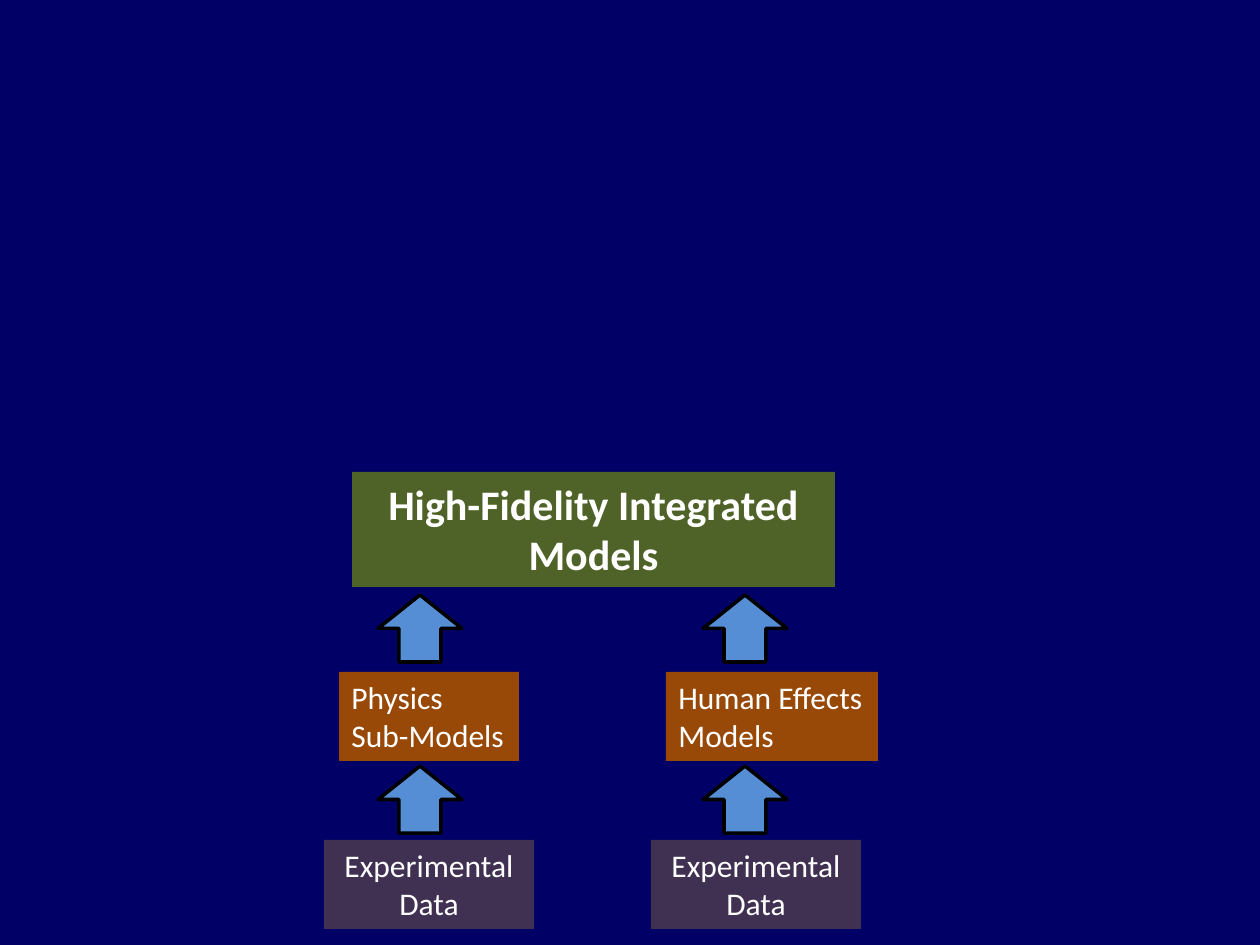
from pptx import Presentation
from pptx.dml.color import RGBColor
from pptx.enum.shapes import MSO_SHAPE
from pptx.enum.text import MSO_ANCHOR, MSO_AUTO_SIZE, PP_ALIGN
from pptx.util import Inches, Pt

PX = Inches(1) / 126
NAVY = RGBColor(0x00, 0x00, 0x66)
GREEN = RGBColor(0x4F, 0x62, 0x28)
BROWN = RGBColor(0x98, 0x48, 0x07)
PURPLE = RGBColor(0x40, 0x31, 0x52)
BLUE = RGBColor(0x55, 0x8E, 0xD5)
WHITE = RGBColor(0xFF, 0xFF, 0xFF)
BLACK = RGBColor(0x00, 0x00, 0x00)
UP_ARROW = MSO_SHAPE.UP_ARROW
LEFT, CENTER = PP_ALIGN.LEFT, PP_ALIGN.CENTER
TOP = MSO_ANCHOR.TOP
GROW = MSO_AUTO_SIZE.SHAPE_TO_FIT_TEXT


class Canvas:
    font = "Calibri"

    def __init__(self, slide, background):
        self.slide = slide
        fill = slide.background.fill
        fill.solid()
        fill.fore_color.rgb = background

    def emu(self, *lengths):
        return [round(length * PX) for length in lengths]

    def box(self, x, y, w, h, lines, color, size=18, bold=False, align=CENTER, wrap=True):
        s = self.slide.shapes.add_textbox(*self.emu(x, y, w, h))
        s.fill.solid()
        s.fill.fore_color.rgb = color
        tf = s.text_frame
        tf.word_wrap = wrap
        tf.auto_size = GROW
        tf.vertical_anchor = TOP
        tf.text = "\n".join(lines)
        for p in tf.paragraphs:
            p.alignment = align
            p.font.name = self.font
            p.font.size = Pt(size)
            p.font.bold = bold
            p.font.color.rgb = WHITE

    def up_arrow(self, x, y, w=84, h=67):
        s = self.slide.shapes.add_shape(UP_ARROW, *self.emu(x, y, w, h))
        s.shadow.inherit = False
        s.fill.solid()
        s.fill.fore_color.rgb = BLUE
        s.line.color.rgb = BLACK
        s.line.width = Pt(2)


def main():
    prs = Presentation()
    prs.slide_width, prs.slide_height = Inches(10), Inches(7.5)
    canvas = Canvas(prs.slides.add_slide(prs.slide_layouts[6]), NAVY)

    canvas.box(352, 472, 483, 115, ["High-Fidelity Integrated Models"], GREEN, 24, True)
    columns = [
        (324, 339, 180, 378, ["Physics", "Sub-Models"]),
        (651, 666, 212, 703, ["Human Effects", "Models"]),
    ]
    for data_x, model_x, model_w, arrow_x, model in columns:
        canvas.box(model_x, 672, model_w, 89, model, BROWN, align=LEFT, wrap=False)
        canvas.box(data_x, 840, 210, 89, ["Experimental Data"], PURPLE)
        for arrow_y in (595, 766):
            canvas.up_arrow(arrow_x, arrow_y)

    prs.save("out.pptx")


if __name__ == "__main__":
    main()
